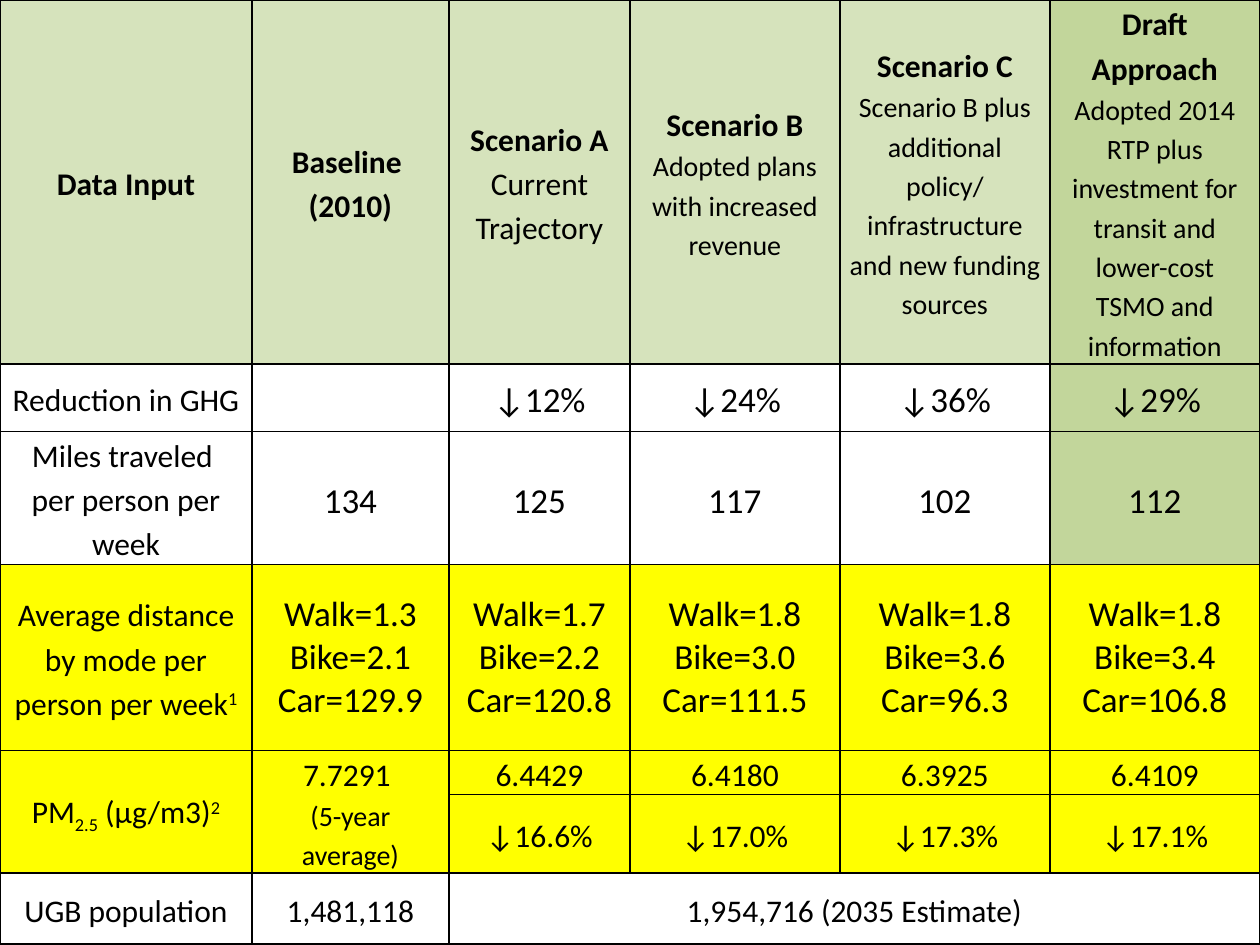
"""Builds a table slide that compares climate scenarios by travel, air quality and population."""
from dataclasses import dataclass

from lxml.etree import SubElement
from pptx import Presentation
from pptx.dml.color import RGBColor
from pptx.enum.text import MSO_ANCHOR, PP_ALIGN
from pptx.oxml import parse_xml
from pptx.oxml.ns import nsdecls, qn
from pptx.util import Emu, Pt

PIXEL = 7258
COLORS = {"text": "000000", "header": "D6E3BC", "draft": "C2D69B", "changed": "FFFF00"}
COLUMNS = [252, 197, 181, 210, 210, 210]
ROWS = [270, 68, 102, 186, 39, 39, 71]


@dataclass
class Span:
    text: str
    size: int = 18
    bold: bool = False
    baseline: int = 0


@dataclass
class Para:
    spans: list
    spacing: float = 1.15
    after: int = 0


class Painter:
    def __init__(self, page, font="Calibri"):
        self.page = page
        self.font = font

    def px(self, length):
        return Emu(length * PIXEL)

    def table(self, columns, rows):
        frame = self.page.shapes.add_table(
            len(rows), len(columns), 0, 0, self.px(sum(columns)), self.px(sum(rows)))
        table = frame.table
        table.first_row = table.horz_banding = False
        for column, width in zip(table.columns, columns):
            column.width = self.px(width)
        for row, height in zip(table.rows, rows):
            row.height = self.px(height)
        return table

    def cell(self, cell, color=None):
        cell.vertical_anchor = MSO_ANCHOR.MIDDLE
        cell.margin_left = cell.margin_right = self.px(9)
        cell.margin_top = cell.margin_bottom = 0
        if color:
            cell.fill.solid()
            cell.fill.fore_color.rgb = RGBColor.from_string(COLORS[color])
        else:
            cell.fill.background()
        properties = cell._tc.get_or_add_tcPr()
        for index, side in enumerate("LRTB"):
            line = parse_xml(f'<a:ln{side} {nsdecls("a")} w="{Pt(1)}"/>')
            fill = SubElement(line, qn("a:solidFill"))
            SubElement(fill, qn("a:srgbClr"), val=COLORS["text"])
            properties.insert(index, line)

    def text(self, cell, paras):
        frame = cell.text_frame
        for index, item in enumerate(paras):
            para = frame.add_paragraph() if index else frame.paragraphs[0]
            para.alignment = PP_ALIGN.CENTER
            para.line_spacing = item.spacing
            para.space_after = Pt(item.after)
            for span in item.spans:
                self.span(para, span)

    def span(self, para, item):
        run = para.add_run()
        run.text = item.text
        run.font.name = self.font
        run.font.size = Pt(item.size)
        run.font.bold = item.bold
        run.font.color.rgb = RGBColor.from_string(COLORS["text"])
        if item.baseline:
            run._r.get_or_add_rPr().set("baseline", str(item.baseline * 1000))


def line(text, size=18, bold=False, after=0):
    return Para([Span(text, size, bold)], after=after)


def heading(title, detail, size=16, after=0):
    return [line(title, bold=True), line(detail, size, after=after)]


def values(texts, size=18):
    return [[line(text, size)] for text in texts]


def distances(walk, bike, car):
    modes = {"Walk": walk, "Bike": bike, "Car": car}
    return [Para([Span(f"{mode}={miles}", 20)], 1.0) for mode, miles in modes.items()]


CONTENT = [
    [
        [line("Data Input", bold=True)],
        [line("Baseline ", bold=True), line("(2010)", bold=True)],
        heading("Scenario A", "Current Trajectory", 18),
        heading("Scenario B", "Adopted plans with increased revenue", after=10),
        heading("Scenario C", "Scenario B plus additional policy/ infrastructure "
                "and new funding sources", after=10),
        heading("Draft Approach", "Adopted 2014 RTP plus investment for transit and "
                "lower-cost TSMO and information"),
    ],
    [[line("Reduction in GHG")], [], *values(["↓12%", "↓24%", "↓36%", "↓29%"], 20)],
    [
        [line("Miles traveled "), line("per person per week")],
        *values(["134", "125", "117", "102", "112"], 20),
    ],
    [
        [Para([Span("Average distance by mode per person per week"), Span("1", baseline=30)])],
        distances("1.3", "2.1", "129.9"),
        distances("1.7", "2.2", "120.8"),
        distances("1.8", "3.0", "111.5"),
        distances("1.8", "3.6", "96.3"),
        distances("1.8", "3.4", "106.8"),
    ],
    [
        [Para([Span("PM"), Span("2.5", baseline=-25), Span(" (µg/m3)"),
               Span("2", baseline=30)], after=10)],
        [line("7.7291 "), line("(5-year average)", 16, after=10)],
        *values(["6.4429", "6.4180", "6.3925", "6.4109"]),
    ],
    [[], [], *values(["↓16.6%", "↓17.0%", "↓17.3%", "↓17.1%"])],
    values(["UGB population", "1,481,118", "1,954,716 (2035 Estimate)"]) + [[], [], []],
]


def cell_color(row, column):
    if row in (3, 4, 5):
        return "changed"
    if column == 5 and row < 3:
        return "draft"
    return "header" if row == 0 else None


def main():
    deck = Presentation()
    deck.slide_width, deck.slide_height = Emu(1260 * PIXEL), Emu(945 * PIXEL)
    painter = Painter(deck.slides.add_slide(deck.slide_layouts[6]))
    table = painter.table(COLUMNS, ROWS)
    for row, contents in enumerate(CONTENT):
        for column, paras in enumerate(contents):
            cell = table.cell(row, column)
            painter.cell(cell, cell_color(row, column))
            painter.text(cell, paras)
    for column in (0, 1):
        table.cell(4, column).merge(table.cell(5, column))
    table.cell(6, 2).merge(table.cell(6, 5))
    deck.save("out.pptx")


if __name__ == "__main__":
    main()
